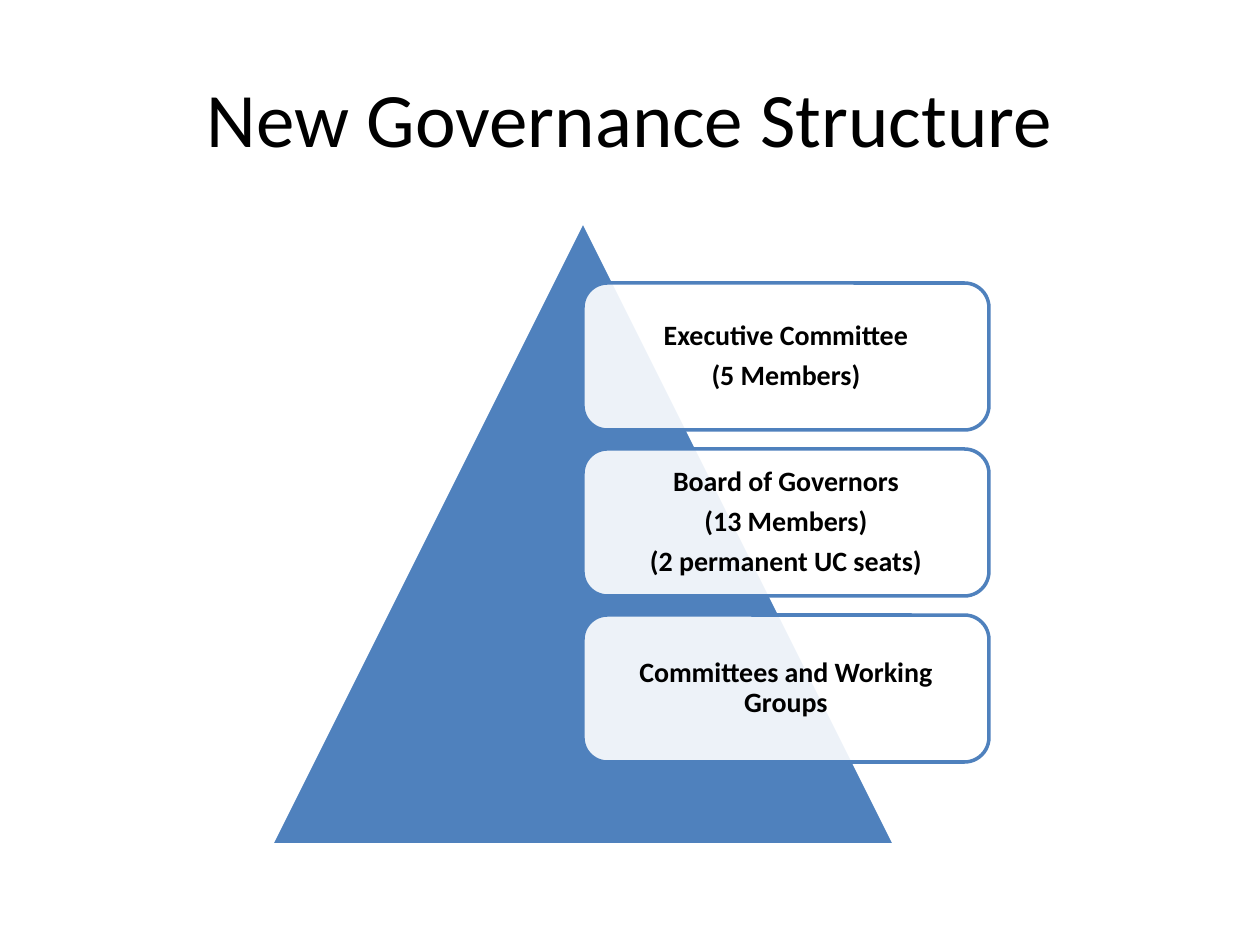
from dataclasses import dataclass

from lxml import etree
from pptx import Presentation
from pptx.dml.color import RGBColor
from pptx.enum.shapes import MSO_SHAPE
from pptx.enum.text import MSO_ANCHOR, PP_ALIGN
from pptx.oxml.ns import qn
from pptx.util import Pt

TRIANGLE, CARD = MSO_SHAPE.ISOSCELES_TRIANGLE, MSO_SHAPE.ROUNDED_RECTANGLE
CENTER, MIDDLE = PP_ALIGN.CENTER, MSO_ANCHOR.MIDDLE

# Content
TITLE = "New Governance Structure"
TIERS = [
    ["Executive Committee", "(5 Members)"],
    ["Board of Governors", "(13 Members)", "(2 permanent UC seats)"],
    ["Committees and Working Groups"],
]

# Layout in px, 126 to the inch
SCALE = 914400 / 126
SLIDE = (1260, 945)
TITLE_BOX = (63, 38, 1134, 157)
PYRAMID_BOX = (271, 221, 624, 624)
CARD_X, CARD_Y, CARD_W, CARD_H = 583, 283, 406, 147
CARD_GAP = 19
CARD_INSET = 9


@dataclass(frozen=True)
class Theme:
    font: str = "Calibri"
    text: RGBColor = RGBColor(0x00, 0x00, 0x00)
    accent: RGBColor = RGBColor(0x4F, 0x81, 0xBD)
    paper: RGBColor = RGBColor(0xFF, 0xFF, 0xFF)
    card_alpha: int = 90
    title_size: int = 44
    card_size: int = 16
    line_width: int = 2


THEME = Theme()


def px(n):
    return round(n * SCALE)


def place(shape, box):
    shape.left, shape.top, shape.width, shape.height = map(px, box)


def write(shape, lines, size, bold=False, spacing=None, after=None, inset=None):
    tf = shape.text_frame
    tf.word_wrap = True
    tf.vertical_anchor = MIDDLE
    if inset is not None:
        tf.margin_left = tf.margin_top = px(inset)
        tf.margin_right = tf.margin_bottom = px(inset)
    for i, line in enumerate(lines):
        p = tf.add_paragraph() if i else tf.paragraphs[0]
        p.alignment, p.line_spacing, p.space_after = CENTER, spacing, after
        r = p.add_run()
        r.text = line
        r.font.name, r.font.size, r.font.bold = THEME.font, Pt(size), bold
        r.font.color.rgb = THEME.text


def add_block(s, kind, box, fill, line, alpha=None):
    sp = s.shapes.add_shape(kind, *map(px, box))
    sp.shadow.inherit = False
    sp.fill.solid()
    sp.fill.fore_color.rgb = fill
    sp.line.color.rgb = line
    sp.line.width = Pt(THEME.line_width)
    if alpha is not None:
        color = sp.fill._xPr.find(qn("a:solidFill"))[0]
        etree.SubElement(color, qn("a:alpha"), val=str(alpha * 1000))
    return sp


def main():
    prs = Presentation()
    prs.slide_width, prs.slide_height = map(px, SLIDE)
    s = prs.slides.add_slide(prs.slide_layouts[5])

    # Title
    title = s.shapes.title
    place(title, TITLE_BOX)
    write(title, [TITLE], THEME.title_size)

    # Pyramid
    add_block(s, TRIANGLE, PYRAMID_BOX, THEME.accent, THEME.paper)

    # Tier cards, evenly stacked over the pyramid
    for i, lines in enumerate(TIERS):
        box = (CARD_X, CARD_Y + i * (CARD_H + CARD_GAP), CARD_W, CARD_H)
        card = add_block(s, CARD, box, THEME.paper, THEME.accent, THEME.card_alpha)
        write(card, lines, THEME.card_size, bold=True, spacing=0.9,
              after=Pt(0.35 * THEME.card_size), inset=CARD_INSET)

    prs.save("out.pptx")


if __name__ == "__main__":
    main()
